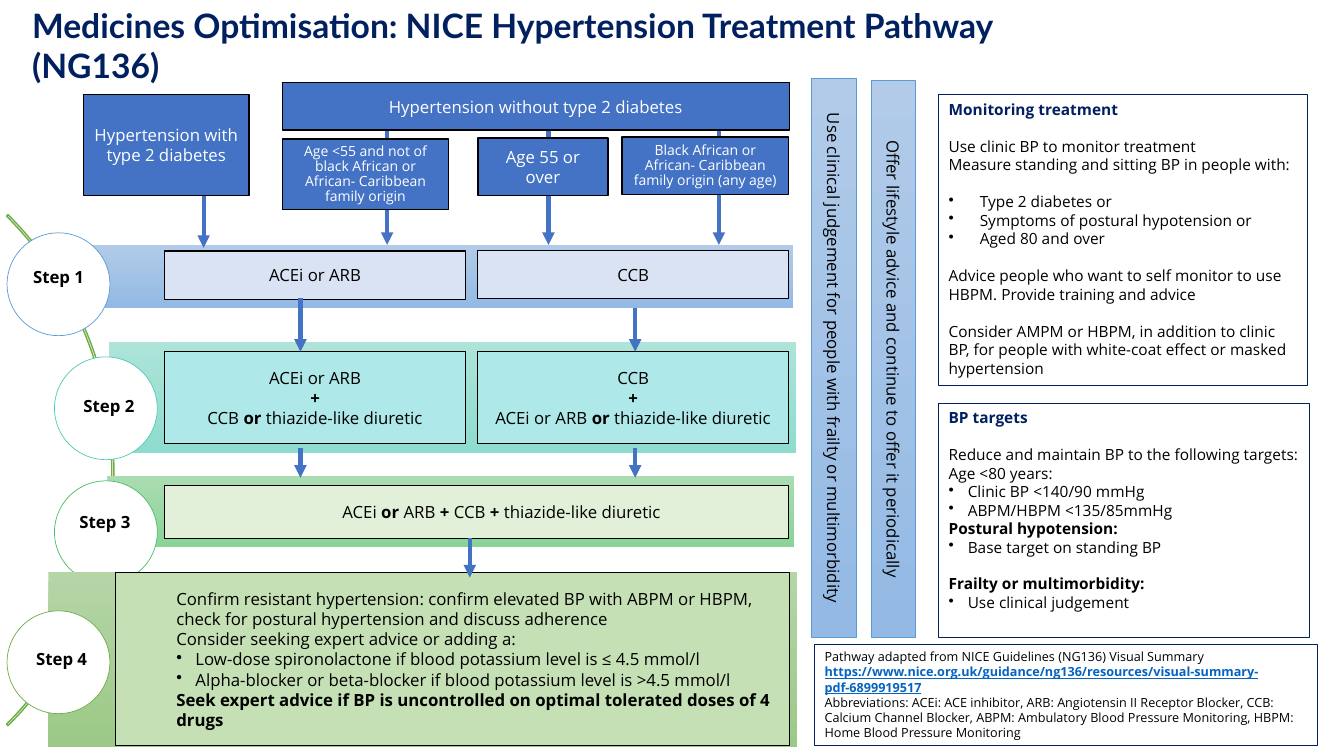
"""Build the hypertension treatment pathway slide."""
from dataclasses import dataclass

from lxml.etree import SubElement
from pptx import Presentation
from pptx.dml.color import RGBColor
from pptx.enum.shapes import MSO_CONNECTOR as Connector, MSO_SHAPE as Shape
from pptx.enum.text import MSO_ANCHOR as Anchor, PP_ALIGN as Align
from pptx.oxml.ns import qn
from pptx.util import Emu, Pt


@dataclass(frozen=True)
class Theme:
    """Colours, fonts and type sizes."""
    body_font: str = "Open Sans"
    title_font: str = "Lato"
    title: int = 24
    body: int = 12
    panel: int = 11
    small: int = 10
    note: int = 9
    ink: str = "000000"
    white: str = "FFFFFF"
    navy: str = "002060"
    blue: str = "4472C4"
    link: str = "0563C1"
    green: str = "70AD47"
    rim: str = "5B9BD5"
    sky: tuple = ("B1CBE9", "93B9E4")
    teal: tuple = ("ADE3D9", "8EDCCE")
    mint: tuple = ("AADCB2", "8AD396")
    leaf: tuple = ("B5D5A7", "9CC987")
    pale_blue: str = "DAE3F3"
    pale_teal: str = "AEE8E8"
    pale_mint: str = "E2F0D9"
    pale_leaf: str = "C5E0B4"


THEME = Theme()
PX = 9144
SLIDE = (1333, 750)
LEFT, LEFT_WIDTH = 163, 299
RIGHT, RIGHT_WIDTH = 474, 308
FULL_WIDTH = RIGHT + RIGHT_WIDTH - LEFT

TITLE = "Medicines Optimisation: NICE Hypertension Treatment Pathway (NG136)"
ARC = (-604, 108, 717, 717)
ARC_SHAPE = (189, 27, 0.003)
CIRCLE = 102

STEPS = [
    ("Step 1", (58, 243, 729, 63), THEME.sky, (7, 231), THEME.rim, (23, 260)),
    ("Step 2", (108, 339, 682, 110), THEME.teal, (54, 354), "52CAB8", (73, 388)),
    ("Step 3", (106, 472, 682, 71), THEME.mint, (54, 477), "49BF64", (69, 503)),
    ("Step 4", (48, 567, 743, 174), THEME.leaf, (7, 606), THEME.green, (26, 639)),
]

TREATMENTS = [
    ((LEFT, 249, LEFT_WIDTH, 48), THEME.pale_blue, ["ACEi or ARB"]),
    ((RIGHT, 249, RIGHT_WIDTH, 47), THEME.pale_blue, ["CCB"]),
    ((LEFT, 349, LEFT_WIDTH, 91), THEME.pale_teal,
     ["ACEi or ARB", "*+*", "CCB *or* thiazide-like diuretic"]),
    ((RIGHT, 349, RIGHT_WIDTH, 91), THEME.pale_teal,
     ["CCB", "*+*", "ACEi or ARB *or* thiazide-like diuretic"]),
]
TRIPLE = ((LEFT, 482, FULL_WIDTH, 52), THEME.pale_mint,
          ["ACEi *or* ARB *+* CCB *+* thiazide-like diuretic"])
RESISTANT = ((115, 568, 668, 172), THEME.pale_leaf, [
    "Confirm resistant hypertension: confirm elevated BP with ABPM or HBPM, "
    "check for postural hypertension and discuss adherence",
    "Consider seeking expert advice or adding a:",
    "• Low-dose spironolactone if blood potassium level is ≤ 4.5 mmol/l",
    "• Alpha-blocker or beta-blocker if blood potassium level is >4.5 mmol/l",
    "*Seek expert advice if BP is uncontrolled on optimal tolerated doses of 4 drugs*",
])

GROUPS = [
    ((83, 94, 164, 100), THEME.body, 1, "Hypertension with type 2 diabetes"),
    ((280, 82, 503, 47), THEME.body, 1, "Hypertension without type 2 diabetes"),
    ((280, 138, 165, 70), THEME.small, 0.9,
     "Age <55 and not of black African or African- Caribbean family origin"),
    ((474, 137, 129, 57), THEME.body, 1, "Age 55 or over"),
    ((617, 136, 165, 57), THEME.small, 0.9,
     "Black African or African- Caribbean family origin (any age)"),
]

ARROWS = [
    (202, 155, 246), (384, 116, 243), (544, 116, 243), (713, 119, 243),
    (298, 296, 349), (630, 306, 349), (298, 444, 474), (630, 444, 474),
    (466, 534, 573),
]

ADVICE_BARS = [
    ((805, 78, 44, 554), "Use clinical judgement for people with frailty or multimorbidity"),
    ((864, 80, 44, 552), "Offer lifestyle advice and continue to offer it periodically"),
]

PANELS = [
    ((931, 94, 366, 288), 31, [
        ["*Monitoring treatment*"],
        ["Use clinic BP to monitor treatment",
         "Measure standing and sitting BP in people with:"],
        ["• Type 2 diabetes or", "• Symptoms of postural hypotension or",
         "• Aged 80 and over"],
        ["Advice people who want to self monitor to use HBPM. Provide training and advice"],
        ["Consider AMPM or HBPM, in addition to clinic BP, for people with "
         "white-coat effect or masked hypertension"],
    ]),
    ((931, 400, 368, 232), 19, [
        ["*BP targets*"],
        ["Reduce and maintain BP to the following targets:", "Age <80 years:",
         "• Clinic BP <140/90 mmHg", "• ABPM/HBPM <135/85mmHg",
         "*Postural hypotension:*", "• Base target on standing BP"],
        ["*Frailty or multimorbidity:*", "• Use clinical judgement"],
    ]),
]

SOURCE_NOTE = ((808, 639, 499, 101), [
    "Pathway adapted from NICE Guidelines (NG136) Visual Summary "
    "*https://www.nice.org.uk/guidance/ng136/resources/visual-summary-pdf-6899919517*",
    "Abbreviations: ACEi: ACE inhibitor, ARB: Angiotensin II Receptor Blocker, "
    "CCB: Calcium Channel Blocker, ABPM: Ambulatory Blood Pressure Monitoring, "
    "HBPM: Home Blood Pressure Monitoring",
])


def rgb(value):
    return RGBColor.from_string(value)


def draw(page, kind, place, fill=None, line=None, width=0.75):
    box = page.shapes.add_shape(kind, *(Emu(n * PX) for n in place))
    box.shadow.inherit = False
    if fill is None:
        box.fill.background()
    elif isinstance(fill, tuple):
        box.fill.gradient()
        box.fill.gradient_angle = 270
        for stop, color in zip(box.fill.gradient_stops, fill):
            stop.color.rgb = rgb(color)
    else:
        box.fill.solid()
        box.fill.fore_color.rgb = rgb(fill)
    if line:
        box.line.color.rgb = rgb(line)
        box.line.width = Pt(width)
    else:
        box.line.fill.background()
    return box


def write(box, blocks, size=THEME.body, color=THEME.ink, font=THEME.body_font,
          align=Align.LEFT, anchor=Anchor.TOP, indent=0, hang=19, spacing=1):
    """Fill a box; each block after the first starts one line lower."""
    frame = box.text_frame
    frame.word_wrap = True
    frame.vertical_anchor = anchor
    lines = [(text, row == 0 and block > 0)
             for block, texts in enumerate(blocks) for row, text in enumerate(texts)]
    for number, (text, opens_block) in enumerate(lines):
        para = frame.add_paragraph() if number else frame.paragraphs[0]
        bullet = text.startswith("• ")
        properties = para._p.get_or_add_pPr()
        properties.set("marL", str((indent + hang * bullet) * PX))
        properties.set("indent", str(-hang * bullet * PX))
        if bullet:
            SubElement(properties, qn("a:buChar")).set("char", "•")
        para.alignment = align
        para.line_spacing = spacing
        if opens_block:
            para.space_before = Pt(size * 1.2)
        for part, words in enumerate(text.removeprefix("• ").split("*")):
            if words:
                span = para.add_run()
                span.text = words
                span.font.size = Pt(size)
                span.font.name = font
                span.font.bold = part % 2 == 1
                span.font.color.rgb = rgb(color)
    return frame


def text_box(page, place, text, **style):
    box = page.shapes.add_textbox(*(Emu(n * PX) for n in place))
    frame = write(box, [[f"*{text}*"]], **style)
    frame.margin_right = 0


def arrow(page, x, top, bottom):
    link = page.shapes.add_connector(
        Connector.STRAIGHT, *(Emu(n * PX) for n in (x, top, x, bottom)))
    link.line.color.rgb = rgb(THEME.blue)
    link.line.width = Pt(3)
    SubElement(link.line._get_or_add_ln(), qn("a:tailEnd")).set("type", "triangle")
    SubElement(link._element.spPr, qn("a:effectLst"))


def main():
    deck = Presentation()
    deck.slide_width, deck.slide_height = (Emu(n * PX) for n in SLIDE)
    page = deck.slides.add_slide(deck.slide_layouts[6])
    centred = {"align": Align.CENTER, "anchor": Anchor.MIDDLE}

    for place, hang, blocks in PANELS:
        panel = draw(page, Shape.RECTANGLE, place, line=THEME.navy)
        frame = write(panel, blocks, THEME.panel, hang=hang)
        frame.paragraphs[0].runs[0].font.color.rgb = rgb(THEME.navy)
    for place, text in ADVICE_BARS:
        bar = draw(page, Shape.RECTANGLE, place, THEME.sky, THEME.rim, 0.5)
        frame = write(bar, [[text]], **centred)
        frame._txBody.bodyPr.set("vert", "vert")

    arc = draw(page, Shape.BLOCK_ARC, ARC, line=THEME.green, width=1)
    for number, value in enumerate(ARC_SHAPE):
        arc.adjustments[number] = value
    for _, band, shades, corner, rim, _ in STEPS:
        draw(page, Shape.RECTANGLE, band, shades)
        draw(page, Shape.OVAL, (*corner, CIRCLE, CIRCLE), THEME.white, rim, 0.5)
    for name, _, _, _, _, corner in STEPS:
        text_box(page, (*corner, 73, 30), name)

    styled = [(item, centred) for item in TREATMENTS]
    styled += [(TRIPLE, {**centred, "indent": 50}),
               (RESISTANT, {"anchor": Anchor.MIDDLE, "indent": 50})]
    for (place, fill, lines), style in styled:
        write(draw(page, Shape.RECTANGLE, place, fill, THEME.ink), [lines], **style)
    for x, top, bottom in ARROWS:
        arrow(page, x, top, bottom)
    for place, size, spacing, text in GROUPS:
        box = draw(page, Shape.RECTANGLE, place, THEME.blue, THEME.ink, 1)
        write(box, [[text]], size, THEME.white, spacing=spacing, **centred)

    text_box(page, (22, 0, 1043, 91), TITLE, size=THEME.title,
             color=THEME.navy, font=THEME.title_font)
    place, lines = SOURCE_NOTE
    frame = write(draw(page, Shape.RECTANGLE, place, line=THEME.navy), [lines], THEME.note)
    address = frame.paragraphs[0].runs[1].font
    address.color.rgb = rgb(THEME.link)
    address.underline = True
    deck.save("out.pptx")


if __name__ == "__main__":
    main()
